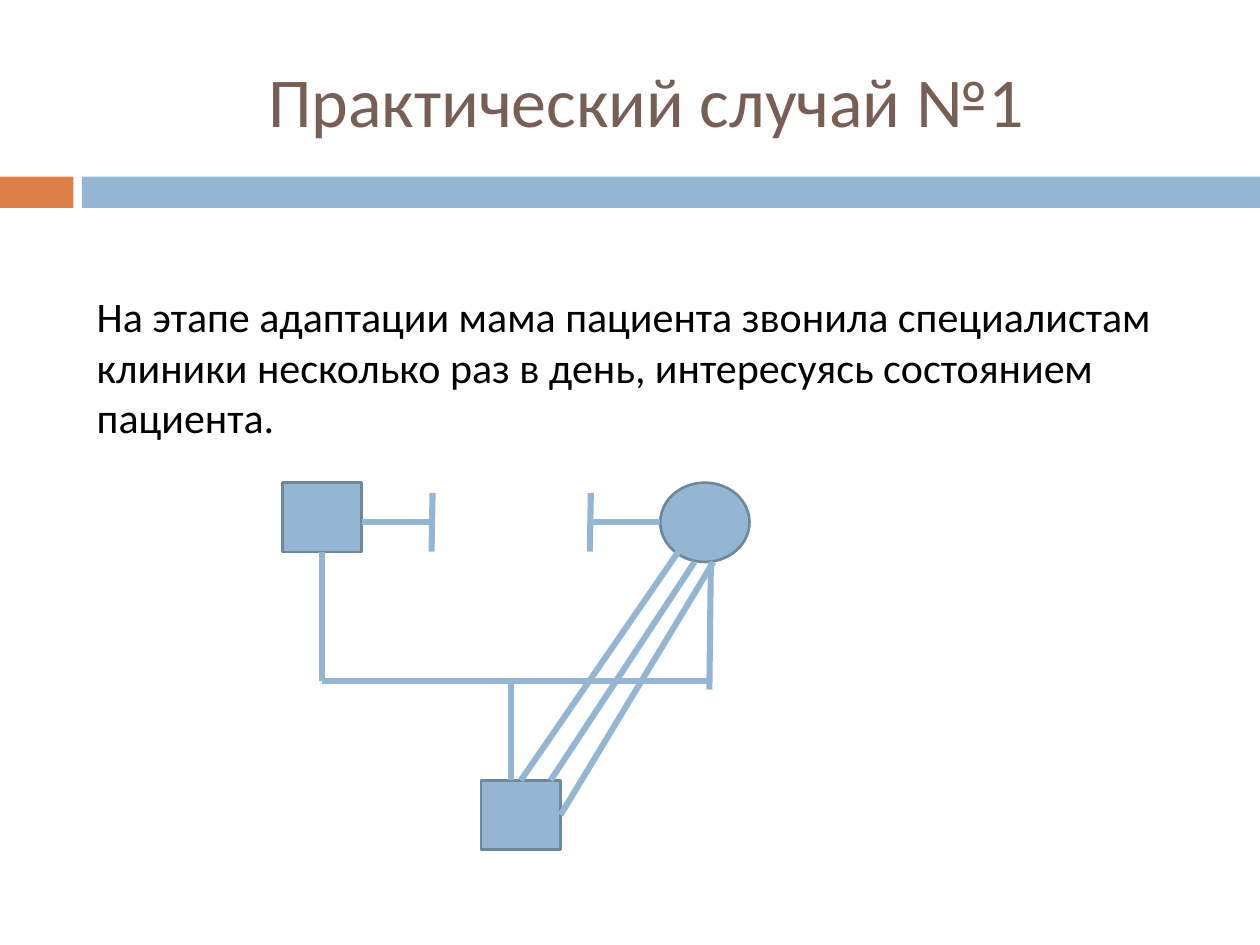
from pptx import Presentation
from pptx import util as u
from pptx.dml.color import RGBColor
from pptx.enum import shapes, text
from pptx.oxml.ns import qn
from lxml import etree

BLUE, OUTLINE, ORANGE = "94B6D2", "6D879B", "DD8047"
BROWN, BLACK = "775F55", "000000"
TOP, LEFT, BOTTOM, RIGHT = range(4)
RECTANGLE = shapes.MSO_SHAPE.RECTANGLE
OVAL = shapes.MSO_SHAPE.OVAL


def color(value):
    return RGBColor.from_string(value)


def add_figure(slide, kind, left, top, width, height, fill=BLUE, outline=None):
    shape = slide.shapes.add_shape(
        kind, u.Cm(left), u.Cm(top), u.Cm(width), u.Cm(height))
    shape.shadow.inherit = False
    shape.fill.solid()
    shape.fill.fore_color.rgb = color(fill)
    if outline:
        shape.line.color.rgb = color(outline)
        shape.line.width = u.Pt(1.5)
    else:
        shape.line.fill.background()
    return shape


def add_text(slide, left, top, width, height, content, size, font_color,
             alignment=text.PP_ALIGN.LEFT, anchor=text.MSO_ANCHOR.TOP):
    box = slide.shapes.add_textbox(
        u.Cm(left), u.Cm(top), u.Cm(width), u.Cm(height))
    frame = box.text_frame
    frame.word_wrap = True
    frame.vertical_anchor = anchor
    paragraph = frame.paragraphs[0]
    paragraph.alignment = alignment
    run = paragraph.add_run()
    run.text = content
    run.font.name = "Calibri"
    run.font.size = u.Pt(size)
    run.font.color.rgb = color(font_color)


def add_line(slide, start, end, begin_joint=None, end_joint=None):
    """Draw a thick line; a joint is a (shape, side) pair to attach to."""
    line = slide.shapes.add_connector(
        shapes.MSO_CONNECTOR.STRAIGHT, *(u.Cm(value) for value in start + end))
    line.line.color.rgb = color(BLUE)
    line.line.width = u.Pt(3.5)
    etree.SubElement(line._element.spPr, qn("a:effectLst"))
    if begin_joint:
        line.begin_connect(*begin_joint)
    if end_joint:
        line.end_connect(*end_joint)


def add_header(slide):
    add_figure(slide, RECTANGLE, 0, 3.56, 1.48, 0.63, ORANGE)
    add_figure(slide, RECTANGLE, 1.65, 3.56, 23.75, 0.63)
    add_text(slide, 1.7, 0.64, 22.65, 2.74, "Практический случай №1", 40, BROWN,
             text.PP_ALIGN.CENTER, text.MSO_ANCHOR.MIDDLE)


def add_genogram(slide):
    """Draw the parents, their child and the ties between them."""
    father = add_figure(slide, RECTANGLE, 5.69, 9.73, 1.6, 1.4, outline=OUTLINE)
    add_figure(slide, OVAL, 13.31, 9.73, 1.8, 1.6, outline=OUTLINE)
    child = add_figure(slide, RECTANGLE, 9.7, 15.73, 1.6, 1.4, outline=OUTLINE)

    # The broken tie between the parents
    tie_y = 10.53
    for person_x, bar_x in ((7.29, 8.71), (13.31, 11.9)):
        add_line(slide, (person_x, tie_y), (bar_x, tie_y))
        add_line(slide, (bar_x + 0.01, tie_y - 0.59), (bar_x - 0.01, tie_y + 0.59))

    # The family bracket
    family_y = 13.72
    add_line(slide, (6.49, 11.13), (6.49, family_y), begin_joint=(father, BOTTOM))
    add_line(slide, (14.31, family_y), (6.49, family_y))
    add_line(slide, (14.33, 11.33), (14.3, 13.9))
    add_line(slide, (10.31, family_y), (10.31, 15.73))

    # The triple tie from mother to child
    add_line(slide, (13.69, 11.1), (10.5, 15.73), end_joint=(child, TOP))
    add_line(slide, (14, 11.33), (11.1, 15.73))
    add_line(slide, (14.38, 11.33), (11.3, 16.43), end_joint=(child, RIGHT))


def main():
    presentation = Presentation()
    presentation.slide_width = u.Cm(25.4)
    presentation.slide_height = u.Cm(19.05)
    slide = presentation.slides.add_slide(presentation.slide_layouts[6])
    add_header(slide)
    add_text(slide, 1.7, 5.74, 22.65, 12.4,
             "На этапе адаптации мама пациента звонила специалистам клиники "
             "несколько раз в день, интересуясь состоянием пациента.", 24, BLACK)
    add_genogram(slide)
    presentation.save("out.pptx")


if __name__ == "__main__":
    main()
